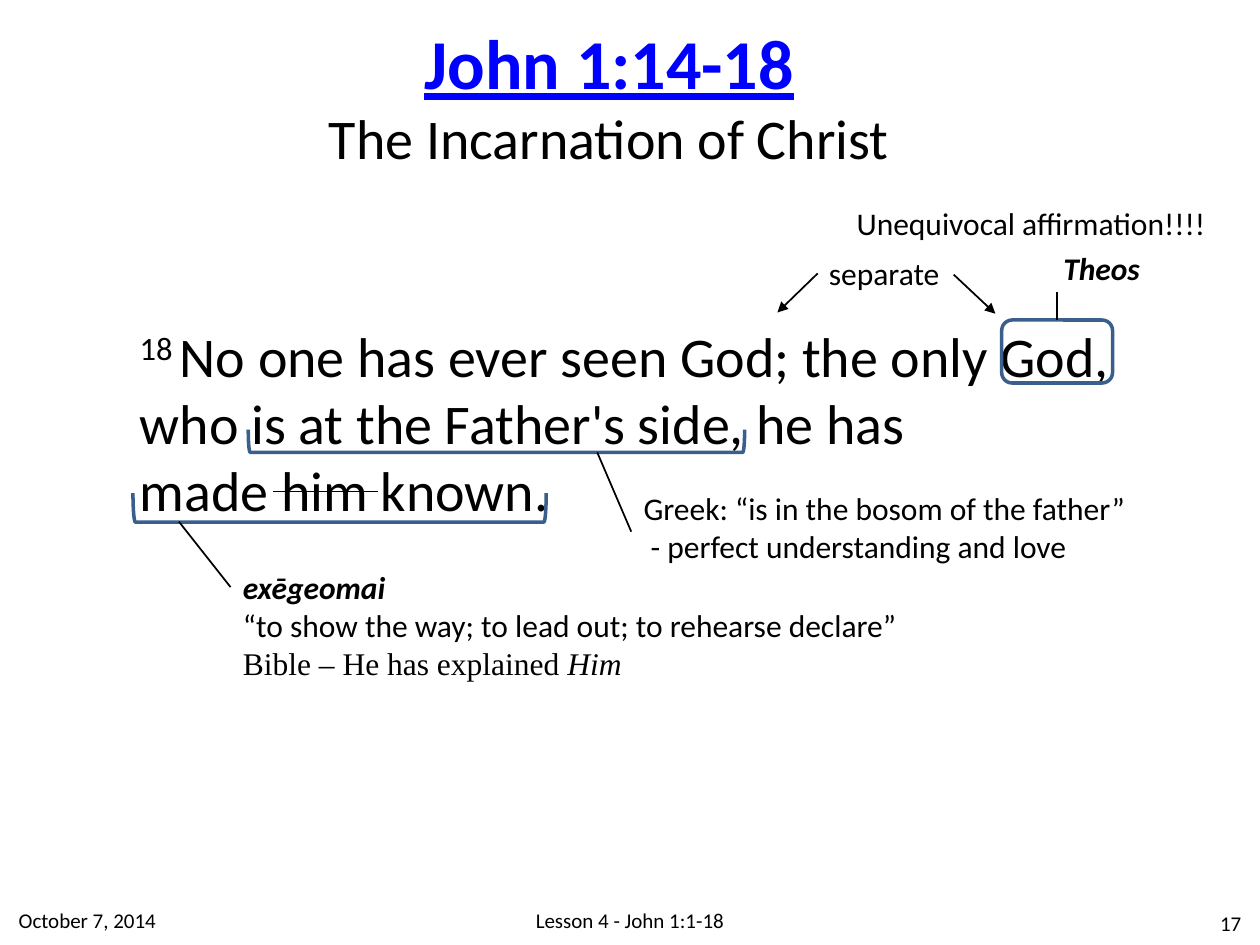
from dataclasses import dataclass

from lxml import etree
from pptx import Presentation
from pptx.dml.color import RGBColor
from pptx.enum.shapes import MSO_CONNECTOR, MSO_SHAPE
from pptx.enum.text import MSO_ANCHOR, PP_ALIGN
from pptx.oxml.ns import qn
from pptx.util import Inches, Pt

BLACK = RGBColor(0, 0, 0)
LINK_BLUE = RGBColor(0x00, 0x00, 0xFF)
MARK_BLUE = RGBColor(0x3A, 0x5F, 0x8C)
BODY_FONT = "Calibri"
SERIF_FONT = "Times New Roman"
LEFT, CENTER, RIGHT = PP_ALIGN.LEFT, PP_ALIGN.CENTER, PP_ALIGN.RIGHT
TOP, MIDDLE = MSO_ANCHOR.TOP, MSO_ANCHOR.MIDDLE
STRAIGHT = MSO_CONNECTOR.STRAIGHT
ROUNDED, BRACKET = MSO_SHAPE.ROUNDED_RECTANGLE, MSO_SHAPE.RIGHT_BRACKET


@dataclass(frozen=True)
class Span:
    text: str
    size: float = 18
    font: str = BODY_FONT
    color: RGBColor = BLACK
    bold: bool = False
    italic: bool = False
    underline: bool = False
    superscript: bool = False
    break_before: bool = False


@dataclass(frozen=True)
class Mark:
    """A blue outline around or under words of the verse."""
    kind: MSO_SHAPE
    left: float
    top: float
    width: float
    height: float
    rotation: float = 0


@dataclass(frozen=True)
class Pointer:
    start: tuple[float, float]
    end: tuple[float, float]
    arrow: bool = False


MARKS = [
    Mark(ROUNDED, 7.95, 2.54, 0.88, 0.5),
    Mark(BRACKET, 3.85, 1.53, 0.18, 3.94, 90),
    Mark(BRACKET, 2.58, 2.39, 0.23, 3.28, 90),
]

POINTERS = [
    Pointer((2.17, 3.9), (3, 3.9)),
    Pointer((8.39, 2.54), (8.39, 2.32)),
    Pointer((1.83, 4.66), (1.42, 4.14)),
    Pointer((4.74, 3.59), (5.01, 4.22)),
    Pointer((7.57, 2.18), (7.9, 2.49), arrow=True),
    Pointer((6.49, 2.17), (6.17, 2.48), arrow=True),
]


def add_text(page, left: float, top: float, width: float, height: float,
             paragraphs: list[list[Span]], *, align=LEFT, anchor=TOP,
             wrap: bool = True) -> None:
    box = page.shapes.add_textbox(Inches(left), Inches(top), Inches(width), Inches(height))
    frame = box.text_frame
    frame.word_wrap = wrap
    frame.vertical_anchor = anchor
    for index, spans in enumerate(paragraphs):
        para = frame.add_paragraph() if index else frame.paragraphs[0]
        para.alignment = align
        for span in spans:
            if span.break_before:
                para.add_line_break()
            run = para.add_run()
            run.text = span.text
            font = run.font
            font.name, font.size = span.font, Pt(span.size)
            font.bold, font.italic = span.bold, span.italic
            font.underline = span.underline
            font.color.rgb = span.color
            if span.superscript:
                run._r.get_or_add_rPr().set("baseline", "30000")


def add_mark(page, mark: Mark) -> None:
    shape = page.shapes.add_shape(mark.kind, Inches(mark.left), Inches(mark.top),
                                  Inches(mark.width), Inches(mark.height))
    shape.rotation = mark.rotation
    shape.shadow.inherit = False
    shape.fill.background()
    shape.line.color.rgb = MARK_BLUE
    shape.line.width = Pt(2)


def add_pointer(page, pointer: Pointer) -> None:
    ends = [Inches(value) for value in pointer.start + pointer.end]
    connector = page.shapes.add_connector(STRAIGHT, *ends)
    connector.line.color.rgb = BLACK
    connector.line.width = Pt(1)
    if pointer.arrow:
        outline = connector.line._get_or_add_ln()
        etree.SubElement(outline, qn("a:tailEnd"), type="triangle")
    etree.SubElement(connector._element.spPr, qn("a:effectLst"))


def add_footer(page) -> None:
    for left, top, width, text, align in [
        (0.05, 7.1, 2.03, "October 7, 2014", LEFT),
        (1.71, 7.1, 6.58, "Lesson 4 - John 1:1-18", CENTER),
        (9.2, 7.13, 0.75, "17", RIGHT),
    ]:
        add_text(page, left, top, width, 0.4, [[Span(text, size=12)]],
                 align=align, anchor=MIDDLE)


def add_notes_on_verse(page) -> None:
    """Add the short remarks around the verse."""
    for left, top, width, height, paragraphs in [
        (6.7, 1.57, 3.01, 0.4, [[Span("Unequivocal affirmation!!!!")]]),
        (6.48, 1.97, 1.09, 0.4, [[Span("separate")]]),
        (8.34, 1.93, 0.82, 0.4, [[Span("Theos", bold=True, italic=True)]]),
        (5.01, 3.83, 4.07, 0.71, [
            [Span("Greek: “is in the bosom of the father”")],
            [Span(" - perfect understanding and love")],
        ]),
        (1.83, 4.46, 5.45, 1.01, [
            [Span("exēgeomai", bold=True, italic=True)],
            [Span("“to show the way; to lead out; to rehearse declare”")],
            [Span("Bible – He has explained ", font=SERIF_FONT),
             Span("Him", font=SERIF_FONT, italic=True)],
        ]),
    ]:
        add_text(page, left, top, width, height, paragraphs, wrap=False)


def main() -> None:
    deck = Presentation()
    deck.slide_width, deck.slide_height = Inches(10), Inches(7.5)
    page = deck.slides.add_slide(deck.slide_layouts[6])

    add_footer(page)
    add_text(page, 2.09, 0.1, 5.49, 1.31, [
        [Span("John 1:14-18", size=40, color=LINK_BLUE, bold=True, underline=True)],
        [Span("The Incarnation of Christ", size=32)],
    ], align=CENTER, anchor=MIDDLE)
    add_text(page, 1.01, 2.5, 7.99, 1.72, [[
        Span("18 ", size=32, superscript=True),
        Span("No one has ever seen God; the only God, who is at the Father's side, he has",
             size=32),
        Span("made him known.", size=32, break_before=True),
    ]])
    for mark in MARKS:
        add_mark(page, mark)
    add_notes_on_verse(page)
    for pointer in POINTERS:
        add_pointer(page, pointer)

    deck.save("out.pptx")


if __name__ == "__main__":
    main()
